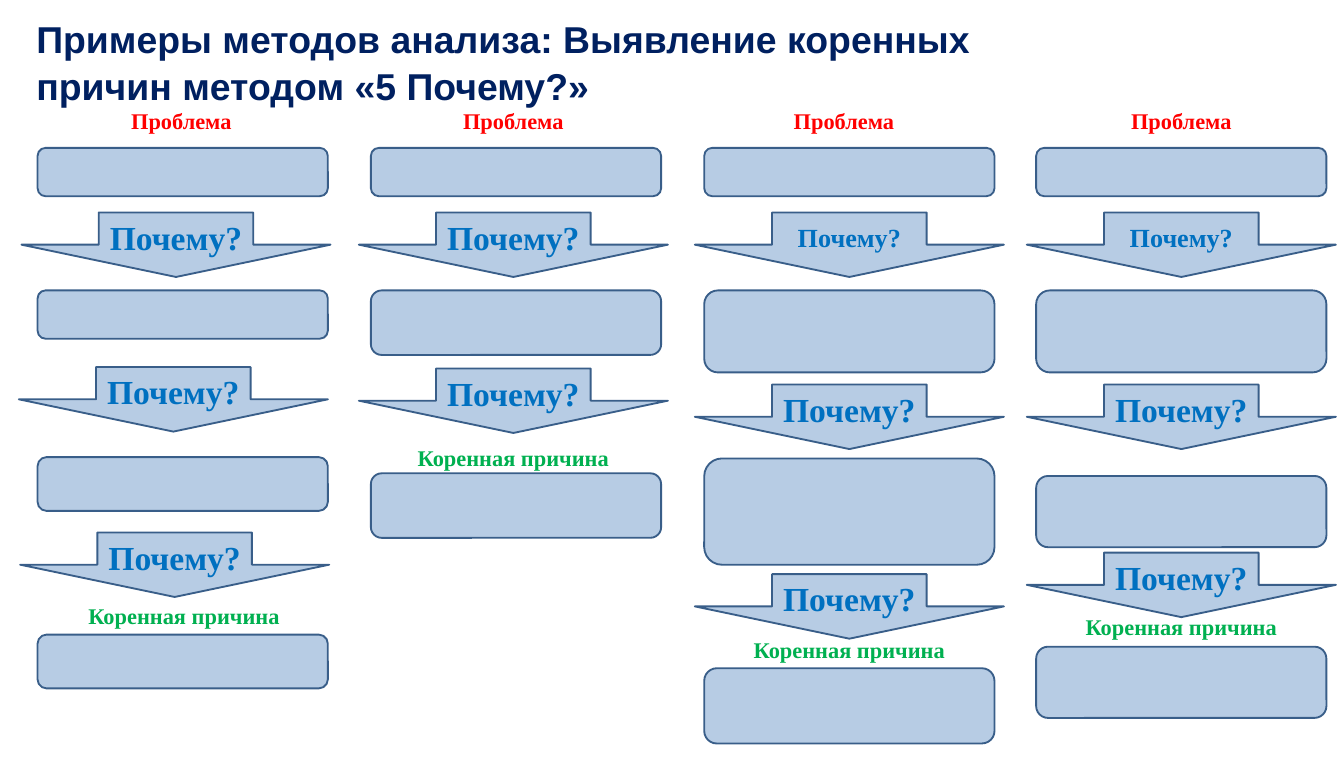
from pptx import Presentation
from pptx.dml.color import RGBColor
from pptx.enum import shapes, text
from pptx.util import Inches, Pt

COLORS = {"title": "002060", "problem": "FF0000", "why": "0070C0",
          "cause": "00B050", "fill": "B7CCE4", "line": "395E89"}
BOX_WIDTH, ARROW_WIDTH, ARROW_HEIGHT, LABEL_HEIGHT = 2.16, 2.3, 0.48, 0.28
PROBLEM_TOP, BOX_TOP, ARROW_TOP = 0.76, 1.1, 1.58

# One entry per column: label and box lefts, arrows as (left, top, size),
# boxes as (top, height), root-cause label as (left, top)
COLUMNS = [
    {"label": 0.2, "box": 0.28, "cause": (0.22, 4.44),
     "arrows": [(0.16, ARROW_TOP, 18), (0.14, 2.73, 18), (0.15, 3.96, 18)],
     "boxes": [(BOX_TOP, 0.36), (2.16, 0.36), (3.4, 0.4), (4.72, 0.4)]},
    {"label": 2.67, "box": 2.76, "cause": (2.67, 3.26),
     "arrows": [(2.67, ARROW_TOP, 18), (2.67, 2.74, 18)],
     "boxes": [(BOX_TOP, 0.36), (2.16, 0.48), (3.52, 0.48)]},
    {"label": 5.13, "box": 5.24, "cause": (5.17, 4.69),
     "arrows": [(5.17, ARROW_TOP, 14), (5.17, 2.86, 18), (5.17, 4.27, 18)],
     "boxes": [(BOX_TOP, 0.36), (2.16, 0.61), (3.41, 0.79), (4.97, 0.56)]},
    {"label": 7.64, "box": 7.71, "cause": (7.64, 4.52),
     "arrows": [(7.64, ARROW_TOP, 14), (7.64, 2.86, 18), (7.64, 4.11, 18)],
     "boxes": [(BOX_TOP, 0.36), (2.16, 0.61), (3.54, 0.53), (4.81, 0.53)]},
]

deck = Presentation()
deck.slide_width, deck.slide_height = Inches(10), Inches(5.63)
page = deck.slides.add_slide(deck.slide_layouts[5])


def write(box, wording, size, color, font="Times New Roman",
          align=text.PP_ALIGN.CENTER, anchor=text.MSO_ANCHOR.TOP):
    frame = box.text_frame
    layout = {"word_wrap": True, "vertical_anchor": anchor,
              "auto_size": text.MSO_AUTO_SIZE.NONE,
              "margin_left": Inches(0.07), "margin_right": Inches(0.07),
              "margin_top": Inches(0.04), "margin_bottom": Inches(0.04)}
    for name, value in layout.items():
        setattr(frame, name, value)
    para = frame.paragraphs[0]
    para.alignment = align
    span = para.add_run()
    span.text = wording
    for name, value in {"name": font, "size": Pt(size), "bold": True}.items():
        setattr(span.font, name, value)
    span.font.color.rgb = RGBColor.from_string(COLORS[color])


def add_block(kind, left, top, width, height):
    block = page.shapes.add_shape(
        kind, Inches(left), Inches(top), Inches(width), Inches(height))
    block.shadow.inherit = False
    block.fill.solid()
    block.fill.fore_color.rgb = RGBColor.from_string(COLORS["fill"])
    block.line.color.rgb = RGBColor.from_string(COLORS["line"])
    block.line.width = Pt(1)
    return block


# Title
title = page.shapes.title
title.left, title.top = Inches(0.2), Inches(0.06)
title.width, title.height = Inches(7.52), Inches(0.75)
write(title, "Примеры методов анализа: Выявление коренных причин методом «5 Почему?»",
      20, "title", "Arial", text.PP_ALIGN.LEFT)
title.text_frame.paragraphs[0].line_spacing = 1.05

for column in COLUMNS:
    # Boxes for the problem, the answers and the root cause
    for top, height in column["boxes"]:
        add_block(shapes.MSO_SHAPE.ROUNDED_RECTANGLE,
                  column["box"], top, BOX_WIDTH, height)

    # Question arrows
    for left, top, size in column["arrows"]:
        arrow = add_block(shapes.MSO_SHAPE.DOWN_ARROW,
                          left, top, ARROW_WIDTH, ARROW_HEIGHT)
        write(arrow, "Почему?", size, "why", anchor=text.MSO_ANCHOR.MIDDLE)

    # Labels at the start and the end of the chain
    for wording, color, (left, top) in [
            ("Проблема", "problem", (column["label"], PROBLEM_TOP)),
            ("Коренная причина", "cause", column["cause"])]:
        label = page.shapes.add_textbox(
            Inches(left), Inches(top), Inches(ARROW_WIDTH), Inches(LABEL_HEIGHT))
        write(label, wording, 12, color)

deck.save("out.pptx")
